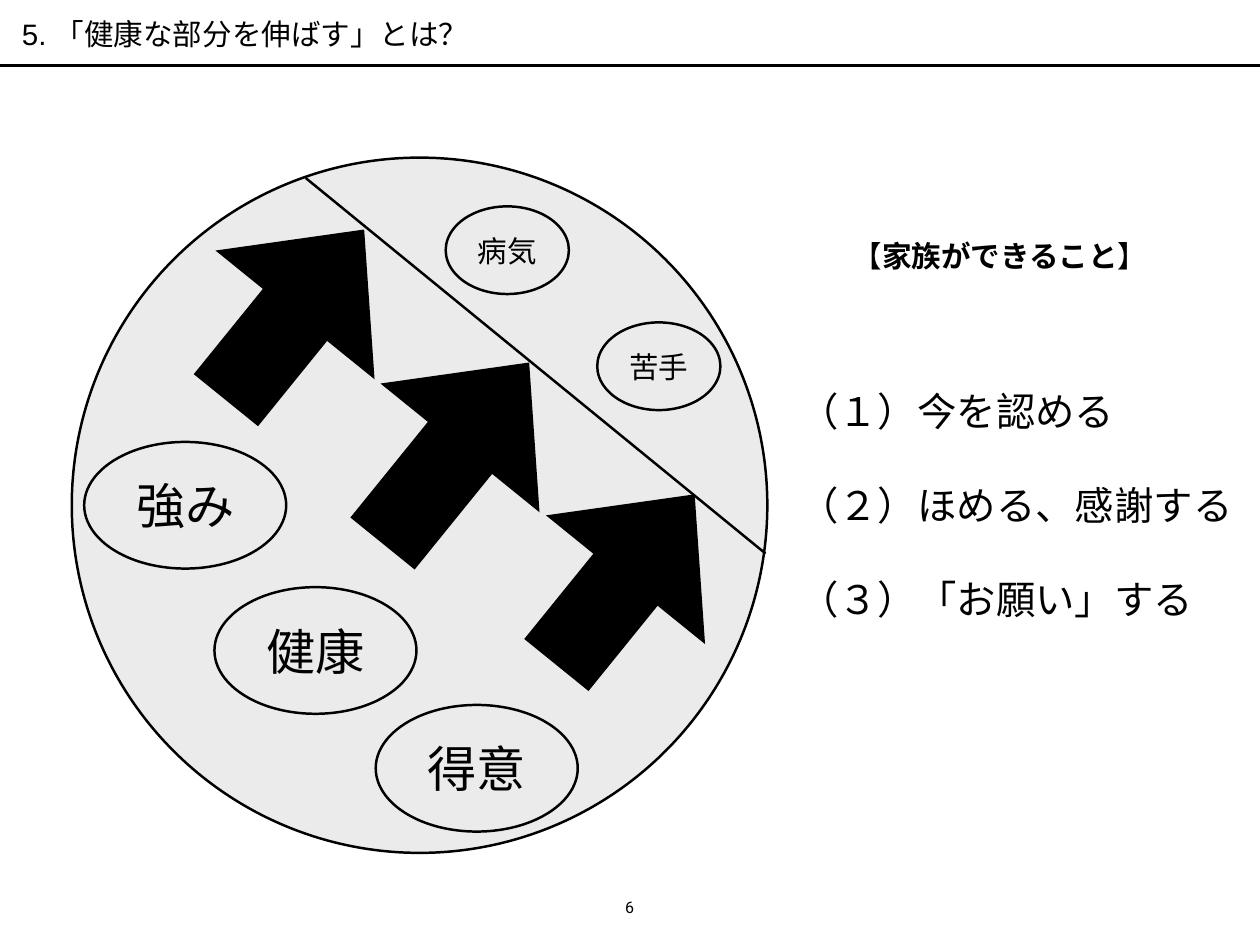
from lxml import etree
from pptx import Presentation
from pptx.dml.color import RGBColor
from pptx.enum.shapes import MSO_CONNECTOR, MSO_SHAPE
from pptx.enum.text import MSO_ANCHOR, MSO_AUTO_SIZE, PP_ALIGN
from pptx.oxml.ns import qn
from pptx.util import Inches, Pt

STRAIGHT = MSO_CONNECTOR.STRAIGHT
OVAL, RIGHT_ARROW = MSO_SHAPE.OVAL, MSO_SHAPE.RIGHT_ARROW
MIDDLE, BOTTOM = MSO_ANCHOR.MIDDLE, MSO_ANCHOR.BOTTOM
LEFT, CENTER = PP_ALIGN.LEFT, PP_ALIGN.CENTER
NO_AUTOFIT = MSO_AUTO_SIZE.NONE

COLORS = {"ink": "000000", "circle": "EBEBEB"}
TITLE_ONLY = 5

TITLE = "5. 「健康な部分を伸ばす」とは？"
FAMILY_STEPS = ["（１）今を認める", "（２）ほめる、感謝する", "（３）「お願い」する"]
STRENGTHS = [("強み", 0.95, 4.99), ("健康", 2.42, 6.63), ("得意", 4.24, 7.96)]
DIFFICULTIES = [("病気", 5.03, 2.33), ("苦手", 6.74, 3.64)]
GROWTH_ARROWS = [(3.83, 3.96, 2.63), (5.82, 5.39, 2.48), (2.09, 2.4, 2.48)]


def color(name):
    return RGBColor.from_string(COLORS[name])


def write_text(shape, paragraphs, size=24, font="Arial", align=CENTER,
               anchor=MIDDLE, wrap=True, space_between=0):
    frame = shape.text_frame
    frame.auto_size = NO_AUTOFIT
    frame.word_wrap = wrap
    frame.vertical_anchor = anchor
    frame.margin_left = frame.margin_right = Inches(0.06)
    frame.margin_top = frame.margin_bottom = Inches(0.06)
    for index, runs in enumerate(paragraphs):
        paragraph = frame.add_paragraph() if index else frame.paragraphs[0]
        paragraph.alignment = align
        paragraph.space_before = Pt(space_between if index else 0)
        for text, bold in runs:
            run = paragraph.add_run()
            run.text = text
            run.font.size = Pt(size)
            run.font.name = font
            run.font.bold = bold
            run.font.color.rgb = color("ink")


class SlideBuilder:
    line_width = Pt(2)

    def __init__(self, slide):
        self.slide = slide

    def title(self, text, left, top, width, height):
        shape = self.slide.shapes.title
        shape.left, shape.top = Inches(left), Inches(top)
        shape.width, shape.height = Inches(width), Inches(height)
        write_text(shape, [[(text, False)]])

    def text(self, paragraphs, left, top, width, height, **text_format):
        shape = self.slide.shapes.add_textbox(
            Inches(left), Inches(top), Inches(width), Inches(height))
        write_text(shape, paragraphs, **text_format)

    def line(self, start, end):
        connector = self.slide.shapes.add_connector(
            STRAIGHT, *(Inches(value) for value in (*start, *end)))
        connector.line.color.rgb = color("ink")
        connector.line.width = self.line_width
        etree.SubElement(connector._element.spPr, qn("a:effectLst"))

    def oval(self, left, top, width, height, fill=None, label=None, size=24):
        shape = self.slide.shapes.add_shape(
            OVAL, Inches(left), Inches(top), Inches(width), Inches(height))
        shape.shadow.inherit = False
        if fill:
            shape.fill.solid()
            shape.fill.fore_color.rgb = color(fill)
        else:
            shape.fill.background()
        shape.line.color.rgb = color("ink")
        shape.line.width = self.line_width
        if label:
            write_text(shape, [[(label, False)]], size=size)

    def arrow(self, left, top, width, height):
        shape = self.slide.shapes.add_shape(
            RIGHT_ARROW, Inches(left), Inches(top), Inches(width), Inches(height))
        shape.shadow.inherit = False
        shape.rotation = 309
        shape.adjustments[0] = 0.404
        shape.adjustments[1] = 0.537
        shape.fill.solid()
        shape.fill.fore_color.rgb = color("ink")
        shape.line.fill.background()


def main():
    presentation = Presentation()
    presentation.slide_width = Inches(14.22)
    presentation.slide_height = Inches(10.67)
    slide = presentation.slides.add_slide(presentation.slide_layouts[TITLE_ONLY])
    builder = SlideBuilder(slide)

    builder.title(TITLE, 0.15, 0.14, 4.9, 0.49)
    builder.line((0, 0.74), (14.22, 0.74))

    builder.oval(0.81, 1.78, 7.85, 7.85, fill="circle")
    builder.line((3.45, 2.01), (8.64, 6.25))
    for left, top, width in GROWTH_ARROWS:
        builder.arrow(left, top, width, 2.31)
    for label, left, top in DIFFICULTIES:
        builder.oval(left, top, 1.39, 0.99, label=label)
    for label, left, top in STRENGTHS:
        builder.oval(left, top, 2.28, 1.43, label=label, size=40)

    heading = [("【", False), ("家族ができること", True), ("】", False)]
    builder.text([heading], 9.38, 2.67, 3.81, 0.44)
    builder.text([[(step, False)] for step in FAMILY_STEPS], 8.96, 4.24, 5.15, 2.92,
                 size=32, align=LEFT, space_between=38)
    builder.text([[("6", False)]], 6.99, 10.1, 0.23, 0.31,
                 size=13, font="Roboto", anchor=BOTTOM, wrap=False)

    presentation.save("out.pptx")


if __name__ == "__main__":
    main()
